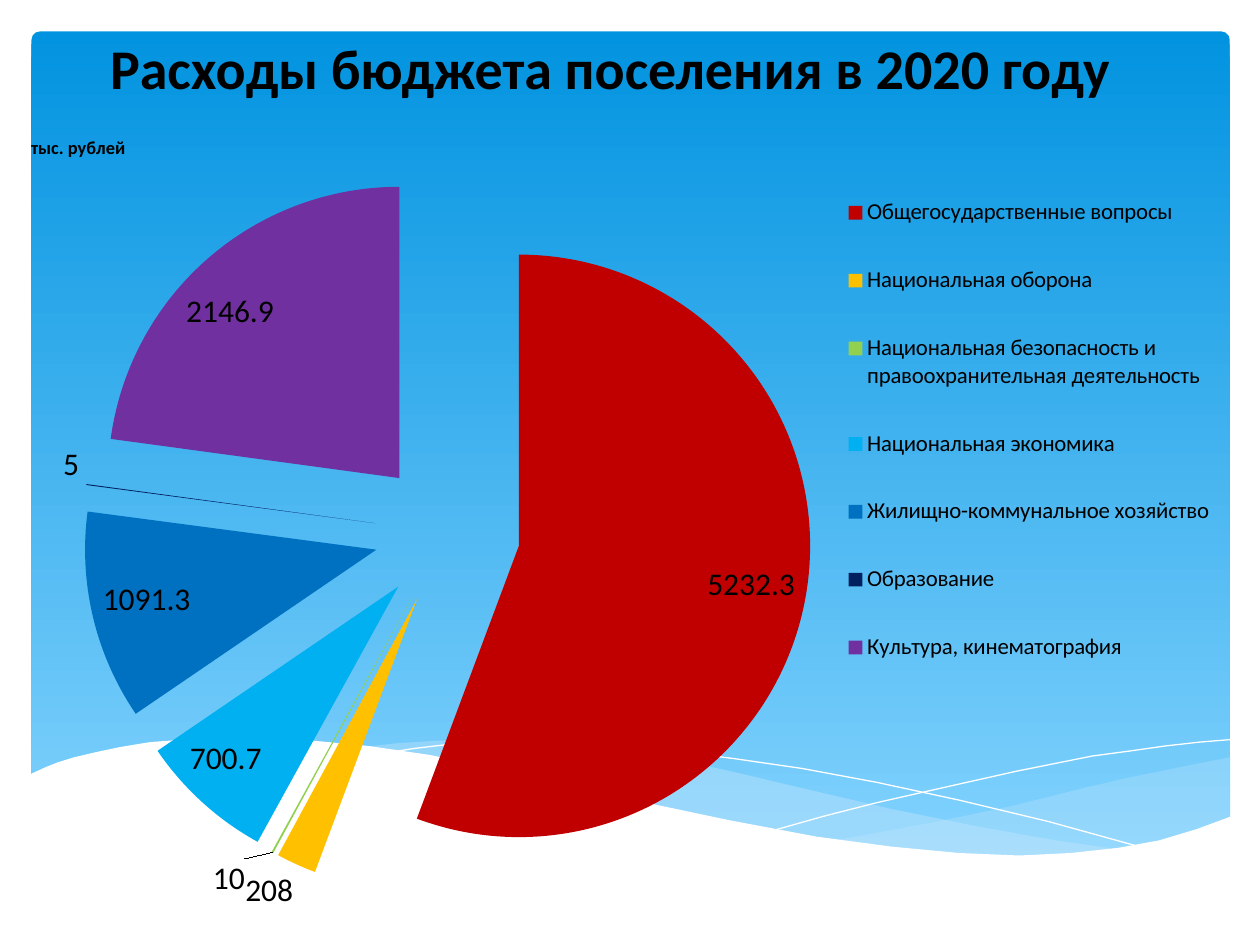
from dataclasses import dataclass

from lxml import etree
from pptx import Presentation
from pptx.chart.data import CategoryChartData
from pptx.dml.color import RGBColor
from pptx.enum.chart import XL_CHART_TYPE, XL_LABEL_POSITION, XL_LEGEND_POSITION
from pptx.enum.shapes import MSO_SHAPE
from pptx.enum.text import MSO_ANCHOR, MSO_AUTO_SIZE, PP_ALIGN
from pptx.oxml.ns import qn
from pptx.util import Pt

PX = 9144
PIE = XL_CHART_TYPE.PIE
BEST = XL_LABEL_POSITION.BEST_FIT
RIGHT = XL_LEGEND_POSITION.RIGHT
ROUND = MSO_SHAPE.ROUNDED_RECTANGLE
MIDDLE = MSO_ANCHOR.MIDDLE
GROW = MSO_AUTO_SIZE.SHAPE_TO_FIT_TEXT
CENTER = PP_ALIGN.CENTER


@dataclass(frozen=True)
class Theme:
    """Colours and type sizes of the slide."""
    font: str = "Calibri"
    text: str = "000000"
    white: str = "FFFFFF"
    haze: str = "C6E7FC"
    sky: tuple = ("0293E0", "83D3FE")
    head: float = 32
    label: float = 18
    key: float = 13
    unit: float = 10.5


THEME = Theme()

COSTS = [
    ("Общегосударственные вопросы", 5232.3, "C00000"),
    ("Национальная оборона", 208, "FFC000"),
    ("Национальная безопасность и правоохранительная деятельность", 10, "92D050"),
    ("Национальная экономика", 700.7, "00B0F0"),
    ("Жилищно-коммунальное хозяйство", 1091.3, "0070C0"),
    ("Образование", 5, "002060"),
    ("Культура, кинематография", 2146.9, "7030A0"),
]

EAST = [(953, 15), (913, 23), (869, 32), (839, 39), (783, 53), (731, 64),
        (684, 73), (639, 81), (669, 85), (710, 90), (747, 93), (792, 94),
        (832, 92), (867, 88), (899, 81), (928, 73), (954, 63), (954, 15)]
SWELL = [(871, 89), (815, 81), (753, 70), (684, 56), (607, 38), (561, 27),
         (519, 18), (479, 12), (442, 7), (397, 3), (357, 1), (322, 2),
         (291, 4), (264, 7), (300, 12), (340, 18), (382, 27), (427, 38),
         (507, 56), (579, 71), (628, 80), (673, 86), (714, 91), (763, 94),
         (816, 94), (845, 92)]
FALL = [(287, 11), (306, 8), (340, 4), (379, 3), (428, 3), (466, 6),
        (510, 10), (559, 16), (614, 24), (673, 35), (738, 49), (809, 66),
        (885, 87)]
RISE = [(591, 73), (630, 62), (673, 51), (726, 39), (784, 26), (844, 14),
        (874, 10), (902, 6), (929, 3), (953, 1)]
SHORE = [(954, 62), (927, 72), (897, 81), (864, 87), (827, 91), (786, 93),
         (738, 91), (685, 86), (625, 78), (556, 65), (480, 49), (424, 36),
         (368, 23), (317, 13), (269, 6), (227, 2), (188, 0), (154, 0),
         (123, 1), (96, 3), (72, 7), (53, 11), (36, 15), (23, 19), (13, 23),
         (0, 29), (0, 145), (954, 145)]
WAVES = [(EAST, THEME.haze, 29), (SWELL, THEME.haze, 40), (FALL, None, 100),
         (RISE, None, 100), (SHORE, THEME.white, 100)]


def rgb(code):
    """Turn a hex code into a colour."""
    return RGBColor.from_string(code)


def style(item, **values):
    """Set each named value on an item."""
    for name, value in values.items():
        setattr(item, name, value)


def ink(font, size, bold=False):
    """Give a font the theme face and colour."""
    style(font, name=THEME.font, size=Pt(size), bold=bold)
    font.color.rgb = rgb(THEME.text)


def move(shape, box):
    """Put a shape in a px box."""
    names = ("left", "top", "width", "height")
    style(shape, **{name: n * PX for name, n in zip(names, box)})


def draw_sky(slide, box):
    """Draw the rounded gradient panel."""
    panel = slide.shapes.add_shape(ROUND, *(n * PX for n in box))
    panel.shadow.inherit = False
    panel.adjustments[0] = 0.01
    panel.line.fill.background()
    panel.fill.gradient()
    panel.fill.gradient_angle = 270
    for stop, code, spot in zip(panel.fill.gradient_stops, THEME.sky, (0, 1)):
        stop.color.rgb = rgb(code)
        stop.position = spot


def draw_wave(slide, box, points, code, alpha):
    """Draw one filled wave, or a white curve if it has no fill."""
    spots = [(box[0] + x, box[1] + y) for x, y in points]
    pen = slide.shapes.build_freeform(*spots[0], scale=PX)
    pen.add_line_segments(spots[1:], close=code is not None)
    wave = pen.convert_to_shape()
    wave.shadow.inherit = False
    if code is None:
        wave.fill.background()
        wave.line.color.rgb = rgb(THEME.white)
        wave.line.width = 0
        return
    wave.line.fill.background()
    wave.fill.solid()
    wave.fill.fore_color.rgb = rgb(code)
    if alpha < 100:
        tint = wave.element.find(".//" + qn("a:srgbClr"))
        etree.SubElement(tint, qn("a:alpha"), val=str(alpha * 1000))


def draw_waves(slide, box):
    """Draw the layered waves at the foot."""
    for points, code, alpha in WAVES:
        draw_wave(slide, box, points, code, alpha)


def draw_title(slide, box):
    """Fill the title and bring it to the front."""
    title = slide.shapes.title
    title.element.getparent().append(title.element)
    move(title, box)
    frame = title.text_frame
    frame.text = "Расходы бюджета поселения в 2020 году"
    style(frame, word_wrap=True, auto_size=GROW, vertical_anchor=MIDDLE)
    line = frame.paragraphs[0]
    line.alignment = CENTER
    ink(line.runs[0].font, THEME.head, True)


def fix(chart, tag, after, spot, frame, inner=False):
    """Fix a chart part at a px spot within its frame."""
    part = chart.element.find(".//" + qn(tag))
    for old in part.findall(qn("c:layout")):
        part.remove(old)
    layout = etree.Element(qn("c:layout"))
    rule = etree.SubElement(layout, qn("c:manualLayout"))
    if inner:
        etree.SubElement(rule, qn("c:layoutTarget"), val="inner")
    for name in ("xMode", "yMode"):
        etree.SubElement(rule, qn("c:" + name), val="edge")
    for name, n, full in zip("xywh", spot, frame[2:] * 2):
        etree.SubElement(rule, qn("c:" + name), val=str(round(n / full, 4)))
    part.insert(part.index(part.find(qn(after))) + 1 if after else 0, layout)


def draw_chart(slide, box):
    """Draw the exploded pie with its legend."""
    names, values, codes = zip(*COSTS)
    data = CategoryChartData()
    data.categories = names
    data.add_series("Series 1", values)
    chart = slide.shapes.add_chart(PIE, *(n * PX for n in box), data).chart
    ink(chart.font, THEME.label)

    head = chart.chart_title.text_frame
    head.text = "тыс. рублей"
    ink(head.paragraphs[0].runs[0].font, THEME.unit, True)
    chart.has_legend = True
    style(chart.legend, position=RIGHT, include_in_layout=False)
    ink(chart.legend.font, THEME.key)

    plot = chart.plots[0]
    style(plot, vary_by_categories=True, has_data_labels=True)
    style(plot.data_labels, show_value=True, show_percentage=False,
          number_format="General", number_format_is_linked=False, position=BEST)
    ink(plot.data_labels.font, THEME.label)
    for i, code in enumerate(codes):
        fill = plot.series[0].points[i].format.fill
        fill.solid()
        fill.fore_color.rgb = rgb(code)
    burst = etree.Element(qn("c:explosion"), val="25")
    chart.element.find(".//" + qn("c:ser")).find(qn("c:tx")).addnext(burst)

    fix(chart, "c:title", "c:tx", (10, 29), box)
    fix(chart, "c:legend", "c:legendPos", (651, 50, 307, 431), box)
    fix(chart, "c:plotArea", None, (54, 58, 578, 578), box, True)


def main():
    """Build and save the slide."""
    deck = Presentation()
    style(deck, slide_width=1000 * PX, slide_height=750 * PX)
    slide = deck.slides.add_slide(deck.slide_layouts[5])
    draw_sky(slide, (25, 25, 951, 660))
    draw_waves(slide, (23, 586, 954, 146))
    draw_title(slide, (20, 21, 929, 64))
    draw_chart(slide, (12, 76, 976, 674))
    deck.save("out.pptx")


if __name__ == "__main__":
    main()
